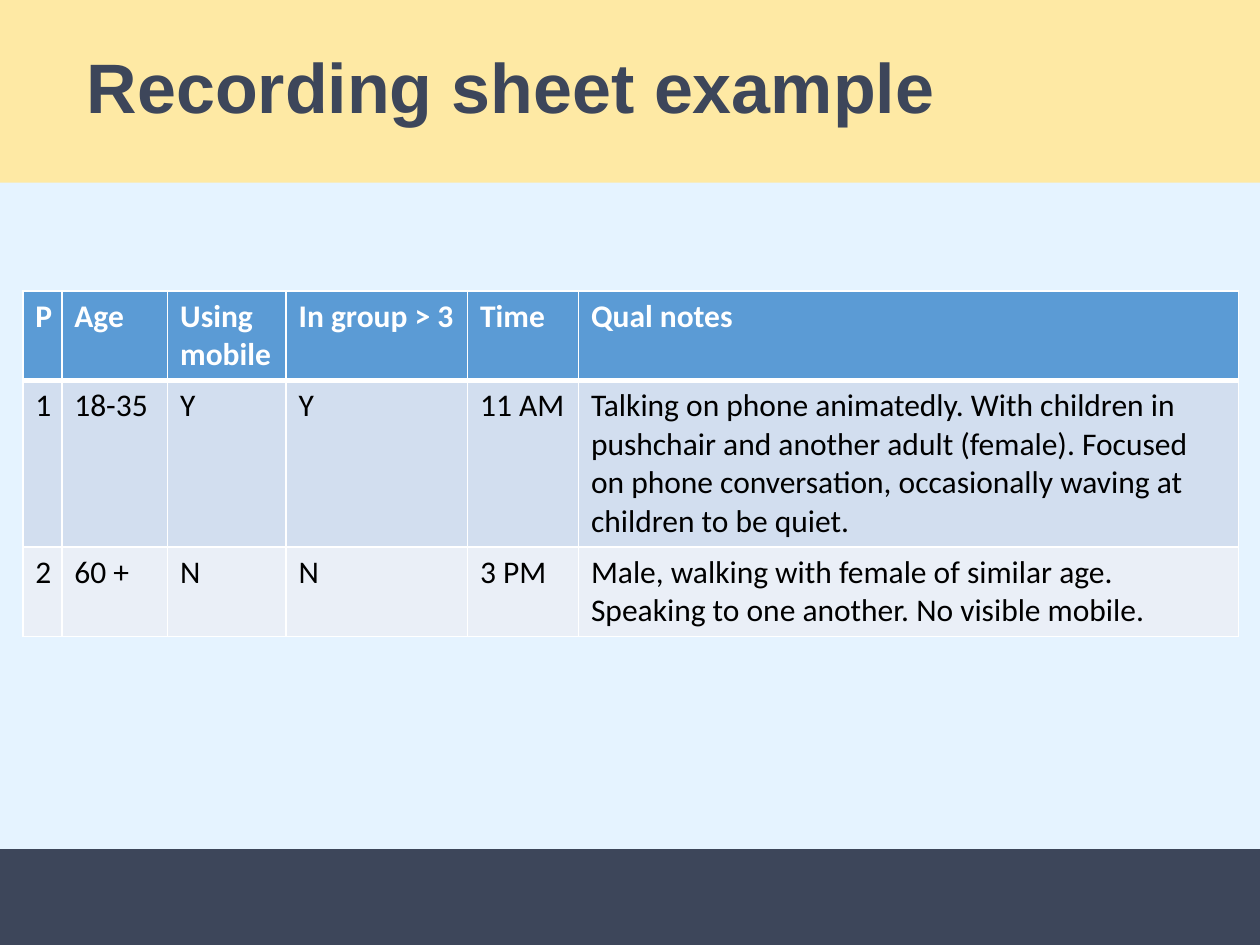
"""Build the recording sheet example slide."""
from dataclasses import dataclass

import pptx
import pptx.dml.color
import pptx.enum.shapes
import pptx.enum.text
import pptx.oxml
import pptx.oxml.ns
import pptx.util

Pt = pptx.util.Pt


@dataclass(frozen=True)
class Theme:
    background: str = "E5F3FF"
    dark: str = "3D465A"
    title_band: str = "FEE9A4"
    header: str = "5B9BD5"
    bands: tuple = ("D2DEEF", "EAEFF7")
    light: str = "FFFFFF"
    text: str = "000000"
    title_font: str = "Arial"
    table_font: str = "Calibri"
    title_size: float = 40
    table_size: float = 18


def rgb(value):
    return pptx.dml.color.RGBColor.from_string(value)


def paint(fill, color):
    fill.solid()
    fill.fore_color.rgb = rgb(color)


def write(frame, text, *, font, size, color, bold=False, spacing=None, indent=0):
    paragraph = frame.paragraphs[0]
    paragraph.alignment = pptx.enum.text.PP_ALIGN.LEFT
    if spacing:
        paragraph.line_spacing = spacing
    if indent:
        properties = paragraph._p.get_or_add_pPr()
        properties.set("marL", str(Pt(indent)))
        properties.set("indent", "0")
    run = paragraph.add_run()
    run.text = text
    run.font.name = font
    run.font.size = Pt(size)
    run.font.bold = bold
    run.font.color.rgb = rgb(color)


def add_border(cell, side, color, width):
    cell._tc.get_or_add_tcPr().append(pptx.oxml.parse_xml(
        f'<a:ln{side} {pptx.oxml.ns.nsdecls("a")} w="{Pt(width)}">'
        f'<a:solidFill><a:srgbClr val="{color}"/></a:solidFill></a:ln{side}>'))


class SlideBuilder:
    def __init__(self, slide, theme):
        self.slide = slide
        self.theme = theme
        paint(slide.background.fill, theme.background)

    def title(self, text, left, top, width, height):
        heading = self.slide.shapes.title
        heading.left, heading.top = Pt(left), Pt(top)
        heading.width, heading.height = Pt(width), Pt(height)
        paint(heading.fill, self.theme.title_band)
        frame = heading.text_frame
        frame.word_wrap = True
        frame.auto_size = pptx.enum.text.MSO_AUTO_SIZE.NONE
        frame.vertical_anchor = pptx.enum.text.MSO_ANCHOR.MIDDLE
        write(frame, text, font=self.theme.title_font, size=self.theme.title_size,
              color=self.theme.dark, bold=True, spacing=0.9, indent=42.5)

    def band(self, left, top, width, height, color):
        band = self.slide.shapes.add_shape(
            pptx.enum.shapes.MSO_SHAPE.RECTANGLE,
            Pt(left), Pt(top), Pt(width), Pt(height))
        band.shadow.inherit = False
        paint(band.fill, color)
        band.line.fill.background()

    def table(self, records, left, top, widths, row_height):
        theme = self.theme
        sheet = self.slide.shapes.add_table(
            len(records), len(widths), Pt(left), Pt(top),
            Pt(sum(widths)), Pt(row_height * len(records))).table
        sheet.horz_banding = False
        for column, width in zip(sheet.columns, widths):
            column.width = Pt(width)
        for row, record in enumerate(records):
            is_header = row == 0
            fill = theme.header if is_header else theme.bands[(row - 1) % 2]
            rules = {"L": 1, "R": 1, "T": 3 if row == 1 else 1, "B": 3 if is_header else 1}
            for column, text in enumerate(record):
                cell = sheet.cell(row, column)
                for side, width in rules.items():
                    add_border(cell, side, theme.light, width)
                paint(cell.fill, fill)
                write(cell.text_frame, text, font=theme.table_font,
                      size=theme.table_size, bold=is_header,
                      color=theme.light if is_header else theme.text)


def main():
    deck = pptx.Presentation()
    deck.slide_width, deck.slide_height = Pt(720), Pt(540)
    theme = Theme()
    builder = SlideBuilder(deck.slides.add_slide(deck.slide_layouts[5]), theme)
    builder.band(0, 485.3, 720, 56, theme.dark)
    builder.title("Recording sheet example", 0, 0, 720, 104.4)
    observations = [
        ("P", "Age", "Using mobile", "In group > 3", "Time", "Qual notes"),
        ("1", "18-35", "Y", "Y", "11 AM",
         "Talking on phone animatedly. With children in pushchair and another adult "
         "(female). Focused on phone conversation, occasionally waving at children "
         "to be quiet."),
        ("2", "60 +", "N", "N", "3 PM",
         "Male, walking with female of similar age. Speaking to one another. "
         "No visible mobile."),
    ]
    builder.table(observations, 13, 166.3, (22.3, 60.5, 67.7, 103.7, 63.4, 377.3), 29.2)
    deck.save("out.pptx")


if __name__ == "__main__":
    main()
